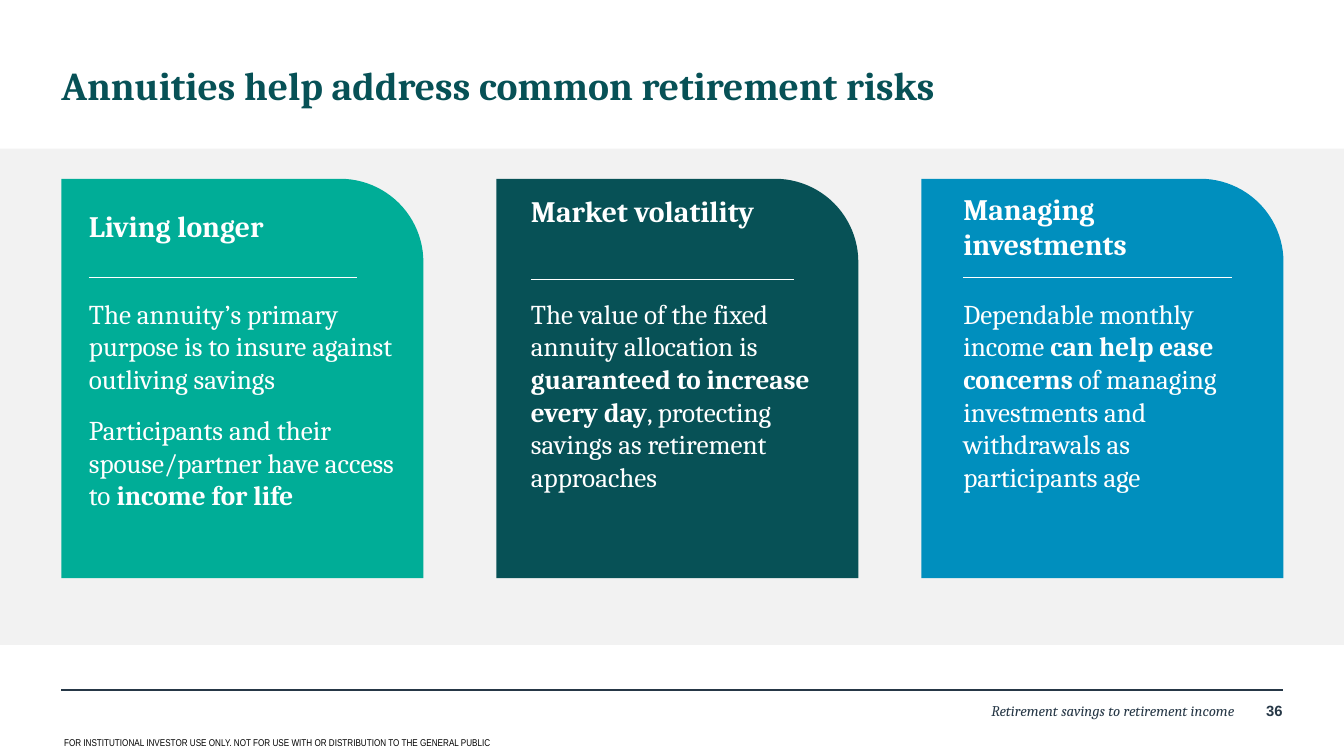
from lxml.etree import SubElement
from pptx import Presentation
from pptx.dml.color import RGBColor
from pptx.enum.shapes import MSO_CONNECTOR as LINE, MSO_SHAPE as SHAPE
from pptx.enum.text import MSO_ANCHOR as ANCHOR, MSO_AUTO_SIZE as FIT, PP_ALIGN as ALIGN
from pptx.oxml.ns import qn
from pptx.util import Pt

PX = 9144  # 100 px to the inch
WIDE, HIGH = 1511, 850
LEFT, RIGHT = 69, 1442

WHITE = RGBColor(0xFF, 0xFF, 0xFF)
BLACK = RGBColor(0, 0, 0)
GREY = RGBColor(0xF2, 0xF2, 0xF2)
NAVY = RGBColor(0x26, 0x37, 0x46)
GREEN = RGBColor(0x00, 0xAD, 0x97)
TEAL = RGBColor(0x07, 0x51, 0x56)
BLUE = RGBColor(0x00, 0x8F, 0xBE)

CARD_W, CARD_H = 407, 449
# left, fill, text inset, heading (top, width, height), rule (top, width),
# body width, space after, heading, paragraphs
CARDS = [
    (69, GREEN, 31, (33, 344, 40), (111, 301), 362, 12, "Living longer",
     ["The annuity’s primary purpose is to insure against outliving savings",
      "Participants and their spouse/partner have access to *income for life*"]),
    (558, TEAL, 39, (16, 280, 81), (113, 296), 344, 6, "Market volatility",
     ["The value of the fixed annuity allocation is *guaranteed to increase "
      "every day*, protecting savings as retirement approaches"]),
    (1036, BLUE, 47, (13, 302, 81), (111, 302), 312, 6, "Managing investments",
     ["Dependable monthly income *can help ease concerns* of managing "
      "investments and withdrawals as participants age"]),
]


def px(*nums):
    return [n * PX for n in nums]


def style(para, size, color, face="Cambria", bold=False, italic=False):
    font = para.font
    font.name, font.size, font.bold, font.italic = face, Pt(size), bold, italic
    font.color.rgb = color


def write(shapes, box, texts, size, color, align=ALIGN.LEFT, after=0, **look):
    """Add a text box; words between asterisks are bold."""
    frame = shapes.add_textbox(*px(*box)).text_frame
    frame.word_wrap = True
    frame.margin_left = frame.margin_right = frame.margin_top = frame.margin_bottom = 0
    for i, text in enumerate(texts):
        para = frame.add_paragraph() if i else frame.paragraphs[0]
        para.alignment = align
        para.space_before = Pt(3 if i else 0)
        para.space_after = Pt(after)
        style(para, size, color, **look)
        for j, part in enumerate(text.split("*")):
            if part:
                run = para.add_run()
                run.text = part
                if j % 2:
                    run.font.bold = True


def block(shapes, kind, box, color):
    shape = shapes.add_shape(kind, *px(*box))
    shape.shadow.inherit = False
    shape.fill.solid()
    shape.fill.fore_color.rgb = color
    shape.line.fill.background()
    return shape


def rule(shapes, x, y, w, color, weight):
    line = shapes.add_connector(LINE.STRAIGHT, *px(x, y, x + w, y))
    line.line.color.rgb = color
    line.line.width = Pt(weight)
    SubElement(line._element.spPr, qn("a:effectLst"))


def title(slide, box):
    shape = slide.shapes.title
    shape.left, shape.top, shape.width, shape.height = px(*box)
    frame = shape.text_frame
    frame.text = "Annuities help address common retirement risks"
    frame.margin_left = frame.margin_right = frame.margin_top = frame.margin_bottom = 0
    frame.vertical_anchor = ANCHOR.TOP
    frame.auto_size = FIT.NONE
    frame.word_wrap = True
    frame.paragraphs[0].alignment = ALIGN.LEFT
    style(frame.paragraphs[0], 32, TEAL, bold=True)


def card(slide, x, y, fill, inset, head, bar, width, after, name, texts):
    shapes = slide.shapes.add_group_shape().shapes
    back = block(shapes, SHAPE.ROUND_1_RECTANGLE, (x, y, CARD_W, CARD_H), fill)
    back.adjustments[0] = 0.23
    left = x + inset
    top, wide, high = head
    write(shapes, (left, y + top, wide, high), [name], 24, WHITE, after=6, bold=True)
    write(shapes, (left, y + 133, width, 243), texts, 22, WHITE, after=after)
    drop, span = bar
    rule(shapes, left, y + drop, span, WHITE, 1)


def footer(slide, x, y, w):
    shapes = slide.shapes
    rule(shapes, x, y, w, NAVY, 2)
    write(shapes, (x + w - 40, y + 13, 40, 33), ["36"], 12, NAVY, ALIGN.RIGHT,
          face="Arial", bold=True)
    write(shapes, (x + w - 910, y + 13, 856, 40),
          ["Retirement savings to retirement income"], 12, NAVY, ALIGN.RIGHT, italic=True)
    write(shapes, (x + 3, y + 52, 1085, 14),
          ["FOR INSTITUTIONAL INVESTOR USE ONLY. NOT FOR USE WITH OR "
           "DISTRIBUTION TO THE GENERAL PUBLIC"], 8, BLACK, face="Arial Narrow")


def main():
    deck = Presentation()
    deck.slide_width, deck.slide_height = px(WIDE, HIGH)
    slide = deck.slides.add_slide(deck.slide_layouts[5])
    title(slide, (LEFT, 69, RIGHT - LEFT, 90))
    block(slide.shapes, SHAPE.RECTANGLE, (0, 167, WIDE, 558), GREY)
    footer(slide, LEFT, 776, RIGHT - LEFT)
    for x, *rest in CARDS:
        card(slide, x, 201, *rest)
    deck.save("out.pptx")


if __name__ == "__main__":
    main()
